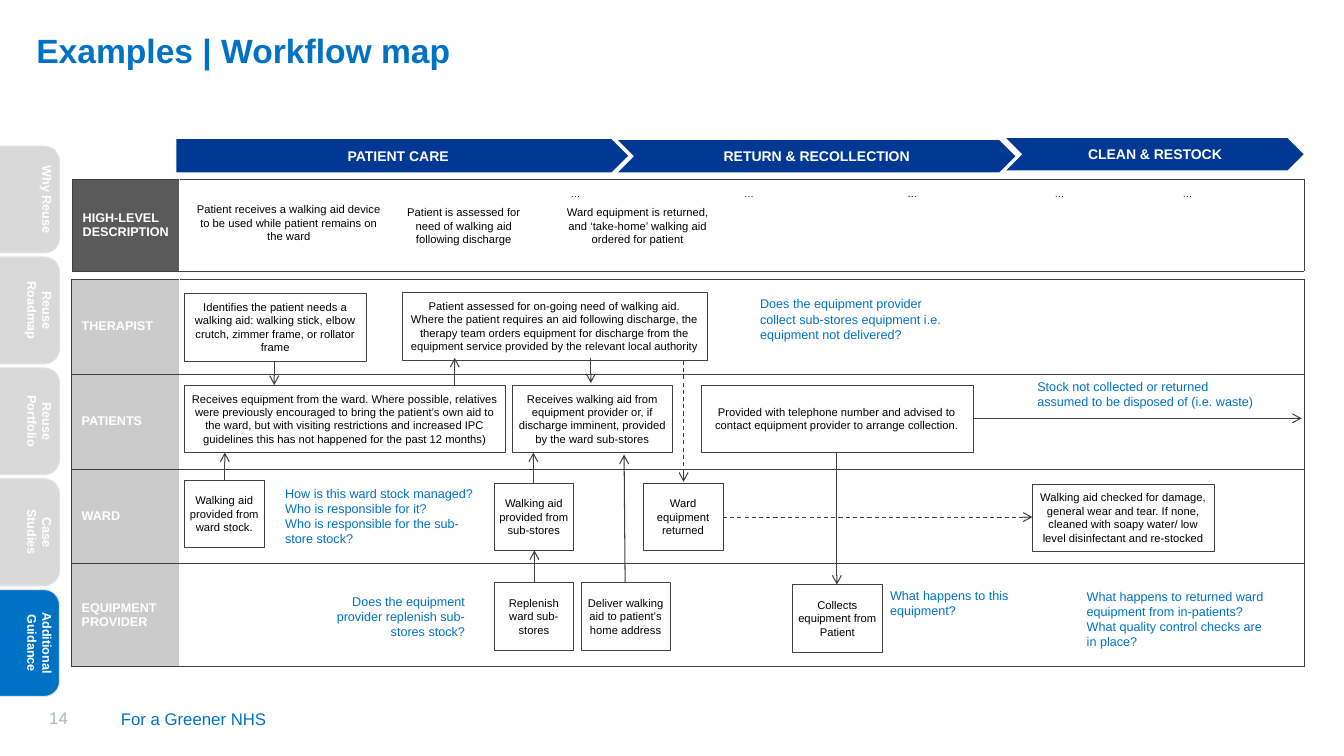
from lxml import etree
from pptx import Presentation
from pptx.dml.color import RGBColor as RGB
from pptx.enum.dml import MSO_LINE
from pptx.enum.shapes import MSO_CONNECTOR, MSO_SHAPE as Kind
from pptx.enum.text import MSO_ANCHOR as Anchor, PP_ALIGN as Align
from pptx.oxml.ns import qn
from pptx.util import Inches, Pt


class Theme:
    blue = RGB.from_string("0072C6")
    navy = RGB.from_string("003893")
    bar = RGB.from_string("005EB8")
    white = RGB.from_string("FFFFFF")
    black = RGB.from_string("000000")
    ink = RGB.from_string("404040")
    dark = RGB.from_string("5A5A5A")
    lane = RGB.from_string("CBCBCB")
    tab = RGB.from_string("D9D9D9")
    rim = RGB.from_string("E2E2E2")
    page = RGB.from_string("ADB6BE")
    base = {"name": "Arial", "bold": False}
    title = {**base, "size": Pt(24), "bold": True, "color": blue}
    phase = {**base, "size": Pt(10), "bold": True, "color": white}
    label = {**base, "size": Pt(9), "bold": True, "color": white}
    step = {**base, "size": Pt(8), "color": black}
    dots = {**base, "size": Pt(7), "color": black}
    ask = {**base, "size": Pt(9), "color": blue}
    foot = {**base, "size": Pt(12), "color": blue}


def write(frame, text, style, align=Align.LEFT, **look):
    """Fill a text frame, one paragraph for each line of text."""
    for key, val in {"word_wrap": True, **look}.items():
        setattr(frame, key, val)
    frame.text = text
    for para in frame.paragraphs:
        para.alignment = align
        for key, val in style.items():
            if key == "color":
                para.font.color.rgb = val
            else:
                setattr(para.font, key, val)


def block(kind, box, fill, edge=None, width=0.25):
    """Add a flat preset shape at a box given in inches."""
    shape = slide.shapes.add_shape(kind, *map(Inches, box))
    shape.shadow.inherit = False
    shape.fill.solid()
    shape.fill.fore_color.rgb = fill
    if edge is None:
        shape.line.fill.background()
    else:
        shape.line.color.rgb = edge
        shape.line.width = Pt(width)
    return shape


deck = Presentation()
deck.slide_width, deck.slide_height = Inches(13.33), Inches(7.5)
slide = deck.slides.add_slide(deck.slide_layouts[5])
slim = {"margin_left": Inches(0.04), "margin_right": Inches(0.04)}

# Title
title = slide.shapes.title
title.left, title.top, title.width, title.height = map(Inches, (0.36, 0.25, 10.9, 0.91))
write(title.text_frame, "Examples | Workflow map", Theme.title,
      margin_left=0, margin_right=0, vertical_anchor=Anchor.TOP)

# Footer
foot = slide.shapes.add_textbox(*map(Inches, (1.1, 6.93, 7.7, 0.4)))
write(foot.text_frame, "For a Greener NHS", Theme.foot, vertical_anchor=Anchor.MIDDLE)
num = slide.shapes.add_textbox(*map(Inches, (0.39, 6.97, 0.87, 0.3)))
para = num.text_frame.paragraphs[0]
tabs = etree.SubElement(para._p.get_or_add_pPr(), qn("a:tabLst"))
etree.SubElement(tabs, qn("a:tab"), pos=str(Inches(0.33)), algn="l")
write(num.text_frame, "14", {**Theme.foot, "color": Theme.page})
run = para.add_run()
run.text = "\t|"
run.font.color.rgb = Theme.bar

# Swimlanes: place, row heights, label fill, labels
grids = [
    ((0.71, 2.77, 1.07, 11.16), (0.94, 0.94, 0.94, 1.02), Theme.lane,
     ("THERAPIST", "PATIENTS", "WARD", "EQUIPMENT PROVIDER")),
    ((0.72, 1.78, 1.06, 11.15), (0.91,), Theme.dark, ("HIGH-LEVEL DESCRIPTION",)),
]
for (left, top, head, body), highs, tint, names in grids:
    grid = slide.shapes.add_table(len(names), 2, *map(
        Inches, (left, top, head + body, sum(highs)))).table
    grid.first_row = grid.horz_banding = False
    grid.columns[0].width, grid.columns[1].width = Inches(head), Inches(body)
    for row, (high, name) in enumerate(zip(highs, names)):
        grid.rows[row].height = Inches(high)
        for col, (fill, seam) in enumerate(((tint, "lnR"), (Theme.white, "lnL"))):
            cell = grid.cell(row, col)
            prop = cell._tc.get_or_add_tcPr()
            for side in ("lnL", "lnR", "lnT", "lnB"):
                line = etree.SubElement(prop, qn("a:" + side), w=str(Pt(0.25)))
                paint = etree.SubElement(line, qn("a:solidFill"))
                color = Theme.white if side == seam else Theme.ink
                etree.SubElement(paint, qn("a:srgbClr"), val=str(color))
            cell.fill.solid()
            cell.fill.fore_color.rgb = fill
        cell = grid.cell(row, 0)
        cell.margin_right = Inches(0.05)
        write(cell.text_frame, name, Theme.label)
        cell.vertical_anchor = Anchor.MIDDLE

# Phase arrows
for kind, box, text in [
    (Kind.PENTAGON, (1.75, 1.38, 4.48, 0.33), "PATIENT CARE"),
    (Kind.CHEVRON, (6.13, 1.39, 3.94, 0.32), "RETURN & RECOLLECTION"),
    (Kind.CHEVRON, (9.98, 1.37, 2.95, 0.32), "CLEAN & RESTOCK"),
]:
    write(block(kind, box, Theme.navy).text_frame, text, Theme.phase, Align.CENTER,
          vertical_anchor=Anchor.MIDDLE)

# High-level descriptions
for left, width in [(5.62, 1.62), (7.34, 1.51), (8.96, 1.36), (10.42, 1.17), (11.69, 1.06)]:
    note = slide.shapes.add_textbox(*map(Inches, (left, 1.84, width, 0.61)))
    write(note.text_frame, "…", Theme.dots, **slim)
    note.text_frame.paragraphs[0].line_spacing = 0.8
for left, top, width, text in [
    (1.83, 1.96, 2.07, "Patient receives a walking aid device to be used while patient remains on the ward"),
    (3.84, 1.99, 1.52, "Patient is assessed for need of walking aid following discharge"),
    (5.51, 1.99, 1.63, "Ward equipment is returned, and ‘take-home’ walking aid ordered for patient"),
]:
    note = slide.shapes.add_textbox(*map(Inches, (left, top, width, 0.5)))
    write(note.text_frame, text, Theme.step, Align.CENTER)

# Workflow steps
for left, top, width, text in [
    (1.83, 2.91, 1.8, "Identifies the patient needs a walking aid: walking stick, elbow crutch, "
     "zimmer frame, or rollator frame"),
    (3.99, 2.9, 3.02, "Patient assessed for on-going need of walking aid.\n"
     "Where the patient requires an aid following discharge, the therapy team orders equipment "
     "for discharge from the equipment service provided by the relevant local authority"),
    (1.83, 3.82, 3.18, "Receives equipment from the ward. Where possible, relatives were "
     "previously encouraged to bring the patient’s own aid to the ward, but with visiting "
     "restrictions and increased IPC guidelines this has not happened for the past 12 months)"),
    (5.08, 3.82, 1.59, "Receives walking aid from equipment provider or, if discharge imminent, "
     "provided by the ward sub-stores"),
    (6.95, 3.82, 2.7, "Provided with telephone number and advised to contact equipment provider "
     "to arrange collection."),
    (1.83, 4.76, 0.79, "Walking aid provided from ward stock."),
    (4.9, 4.79, 0.79, "Walking aid provided from sub-stores"),
    (6.38, 4.79, 0.79, "Ward equipment returned"),
    (10.24, 4.8, 1.8, "Walking aid checked for damage, general wear and tear. If none, cleaned "
     "with soapy water/ low level disinfectant and re-stocked"),
    (4.9, 5.78, 0.79, "Replenish ward sub-stores"),
    (5.76, 5.78, 0.89, "Deliver walking aid to patient’s home address"),
    (7.86, 5.8, 0.89, "Collects equipment from Patient"),
]:
    step = block(Kind.RECTANGLE, (left, top, width, 0.67), Theme.white, Theme.ink)
    write(step.text_frame, text, Theme.step, Align.CENTER,
          vertical_anchor=Anchor.MIDDLE, **slim)

# Flow arrows: start, end, dashed
for *ends, dashed in [
    (2.72, 3.58, 2.72, 3.82, False),
    (4.51, 3.82, 4.51, 3.55, False),
    (5.86, 3.55, 5.86, 3.8, False),
    (2.23, 4.76, 2.23, 4.49, False),
    (5.29, 4.79, 5.29, 4.49, False),
    (5.3, 5.78, 5.3, 5.46, False),
    (6.2, 5.78, 6.19, 4.51, False),
    (8.3, 4.49, 8.3, 5.8, False),
    (9.65, 4.15, 12.91, 4.15, False),
    (6.78, 3.58, 6.78, 4.78, True),
    (7.17, 5.13, 10.24, 5.13, True),
]:
    flow = slide.shapes.add_connector(MSO_CONNECTOR.STRAIGHT, *map(Inches, ends))
    flow.line.color.rgb = Theme.ink
    flow.line.width = Pt(0.75)
    if dashed:
        flow.line.dash_style = MSO_LINE.DASH
    prop = flow._element.spPr
    etree.SubElement(prop.find(qn("a:ln")), qn("a:tailEnd"), type="arrow")
    etree.SubElement(prop, qn("a:effectLst"))

# Open questions
for left, top, width, align, text in [
    (7.44, 2.89, 2.02, Align.LEFT, "Does the equipment provider collect sub-stores equipment "
     "i.e. equipment not delivered?"),
    (10.19, 3.71, 2.39, Align.LEFT, "Stock not collected or returned assumed to be disposed of "
     "(i.e. waste)"),
    (2.73, 4.77, 2.1, Align.LEFT, "How is this ward stock managed?\nWho is responsible for it?\n"
     "Who is responsible for the sub-store stock?"),
    (2.91, 5.84, 1.8, Align.RIGHT, "Does the equipment provider replenish sub-stores stock?"),
    (8.73, 5.78, 1.8, Align.LEFT, "What happens to this equipment?"),
    (10.68, 5.79, 2.02, Align.LEFT, "What happens to returned ward equipment from in-patients?\n"
     "What quality control checks are in place?"),
]:
    note = slide.shapes.add_textbox(*map(Inches, (left, top, width, 0.65)))
    write(note.text_frame, text, Theme.ask, align)

# Side tabs, the last one active
names = ["Why Reuse", "Reuse Roadmap", "Reuse Portfolio", "Case Studies", "Additional Guidance"]
for i, name in enumerate(names):
    fill = Theme.blue if name == names[-1] else Theme.tab
    tab = block(Kind.ROUNDED_RECTANGLE, (-0.2, 1.45 + 1.1 * i, 0.79, 1.06), fill, Theme.rim, 0.75)
    tab.adjustments[0] = 0.19
    write(tab.text_frame, name, Theme.label, Align.CENTER, vertical_anchor=Anchor.TOP,
          margin_left=0, margin_right=0, margin_top=Inches(0.1), margin_bottom=Inches(0.1))
    tab.text_frame._txBody.bodyPr.set("vert", "vert")

deck.save("out.pptx")
